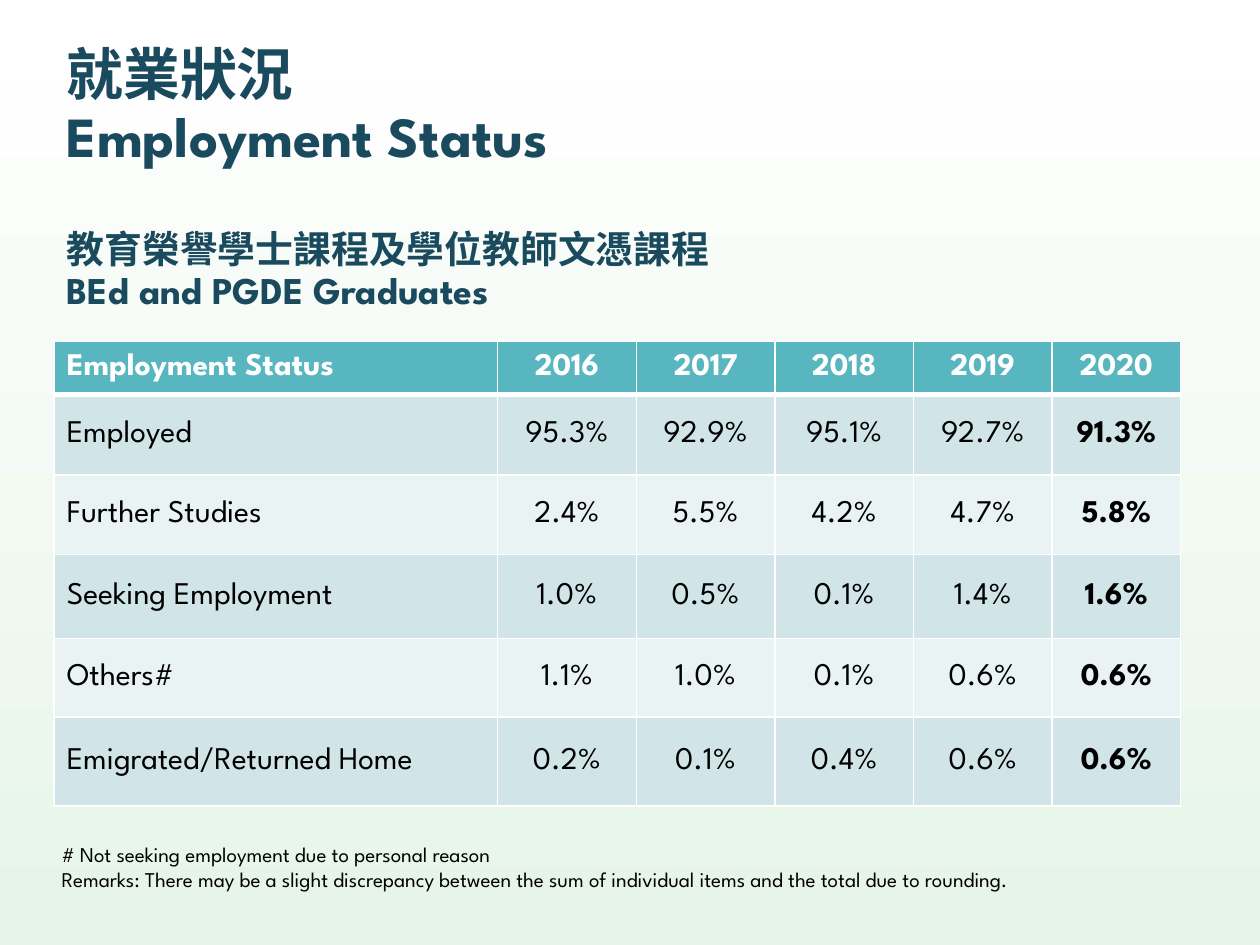
from lxml import etree
from pptx import Presentation
from pptx import util as u
from pptx.dml import color
from pptx.enum import text
from pptx.oxml import ns

FONT = "League Spartan"
LEFT, WIDE = 0.43, 8.96


def rgb(code):
    return color.RGBColor.from_string(code)


class Deck:
    """Holds the style and the current slide."""
    dark, black, white = "1A4A5D", "000000", "FFFFFF"
    head, bands = "58B6C0", ("D1E5E8", "EAF3F4")

    def __init__(self):
        self.prs = Presentation()
        self.prs.slide_width, self.prs.slide_height = u.Inches(10), u.Inches(7.5)
        self.slide = self.prs.slides.add_slide(self.prs.slide_layouts[5])

    def back(self, top, low):
        fill = self.slide.background.fill
        fill.gradient()
        fill.gradient_angle = 270
        for stop, code, pos in zip(fill.gradient_stops, (top, low), (0, 1)):
            stop.color.rgb, stop.position = rgb(code), pos

    def run(self, para, words, size, code, bold=False):
        font_run = para.add_run()
        font_run.text = words
        font = font_run.font
        font.name, font.size, font.bold = FONT, u.Pt(size), bold
        font.color.rgb = rgb(code)

    def title(self, box, lines):
        shape = self.slide.shapes.title
        shape.left, shape.top, shape.width, shape.height = map(u.Inches, box)
        frame = shape.text_frame
        frame.auto_size = text.MSO_AUTO_SIZE.NONE
        frame.vertical_anchor = text.MSO_ANCHOR.MIDDLE
        para = frame.paragraphs[0]
        para.alignment, para.line_spacing = text.PP_ALIGN.LEFT, 0.9
        for i, (words, size) in enumerate(lines):
            if i:
                para.add_line_break()
                # A break takes the size of the line it closes
                mark = etree.SubElement(para._p.br_lst[-1], ns.qn("a:rPr"))
                mark.set("sz", str(round(lines[i - 1][1] * 100)))
                etree.SubElement(mark, ns.qn("a:latin")).set("typeface", FONT)
            if words:
                self.run(para, words, size, self.dark, True)

    def note(self, box, lines):
        frame = self.slide.shapes.add_textbox(*map(u.Inches, box)).text_frame
        frame.word_wrap = True
        for i, words in enumerate(lines):
            para = frame.add_paragraph() if i else frame.paragraphs[0]
            self.run(para, words, 12, self.black)

    def edge(self, cell, low):
        props = cell._tc.get_or_add_tcPr()
        for i, (side, width) in enumerate((("L", 1), ("R", 1), ("T", 1), ("B", low))):
            line = etree.Element(ns.qn("a:ln" + side), w=str(u.Pt(width)))
            fill = etree.SubElement(line, ns.qn("a:solidFill"))
            etree.SubElement(fill, ns.qn("a:srgbClr")).set("val", self.white)
            props.insert(i, line)

    def table(self, box, cols, tall, rows):
        grid = self.slide.shapes.add_table(
            len(rows), len(cols), *map(u.Inches, box)).table
        for col, width in zip(grid.columns, cols):
            col.width = u.Inches(width)
        for r, (row, height) in enumerate(zip(rows, tall)):
            grid.rows[r].height = u.Inches(height)
            for c, words in enumerate(row):
                self.cell(grid.cell(r, c), words, r, c, c == len(cols) - 1)

    def cell(self, cell, words, r, c, last):
        top = r == 0
        cell.vertical_anchor = text.MSO_ANCHOR.MIDDLE
        if c and not top:
            cell.margin_left = cell.margin_right = cell.margin_top = u.Inches(0.01)
            cell.margin_bottom = 0
        cell.fill.solid()
        cell.fill.fore_color.rgb = rgb(self.head if top else self.bands[(r - 1) % 2])
        self.edge(cell, 3 if top else 1)
        para = cell.text_frame.paragraphs[0]
        para.alignment = text.PP_ALIGN.CENTER if c else text.PP_ALIGN.LEFT
        self.run(para, words, 18, self.white if top else self.black, top or last)


def main():
    deck = Deck()
    deck.back("FFFFFF", "E7F5E8")

    # Heading
    deck.title((LEFT, 0.36, WIDE, 2.13), [
        ("就業狀況 ", 32.4), ("Employment Status", 32.4), ("", 32.4),
        ("教育榮譽學士課程及學位教師文憑課程", 21.6),
        ("BEd and PGDE Graduates", 21.6)])

    # Status by year
    rows = [
        ("Employment Status", "2016", "2017", "2018", "2019", "2020"),
        ("Employed", "95.3%", "92.9%", "95.1%", "92.7%", "91.3%"),
        ("Further Studies", "2.4%", "5.5%", "4.2%", "4.7%", "5.8%"),
        ("Seeking Employment", "1.0%", "0.5%", "0.1%", "1.4%", "1.6%"),
        ("Others#", "1.1%", "1.0%", "0.1%", "0.6%", "0.6%"),
        ("Emigrated/Returned Home", "0.2%", "0.1%", "0.4%", "0.6%", "0.6%")]
    deck.table((LEFT, 2.71, WIDE, 3.7), [3.52] + [1.1] * 4 + [1.02],
               [0.42, 0.64, 0.63, 0.67, 0.62, 0.71], rows)

    # Remarks
    deck.note((0.39, 6.63, 9.21, 0.5), [
        "# Not seeking employment due to personal reason",
        "Remarks: There may be a slight discrepancy between the sum of "
        "individual items and the total due to rounding."])
    deck.prs.save("out.pptx")


if __name__ == "__main__":
    main()
